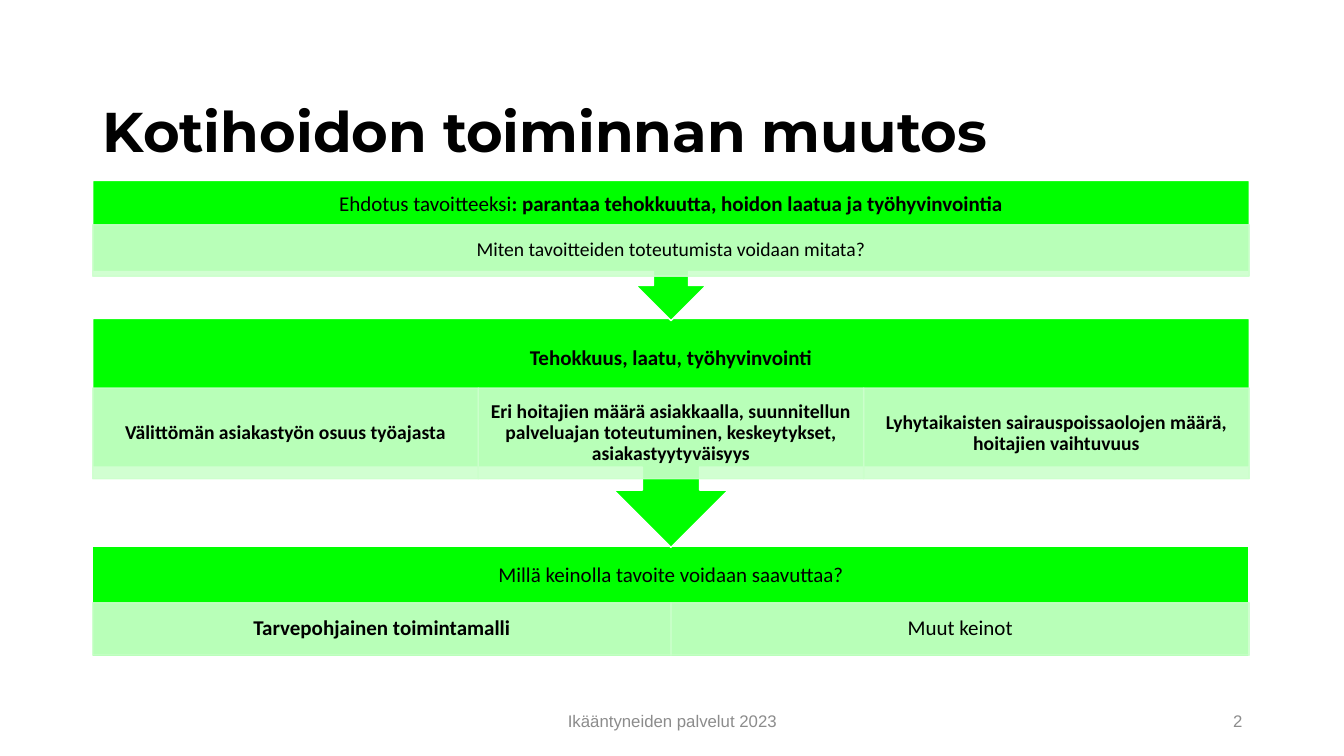
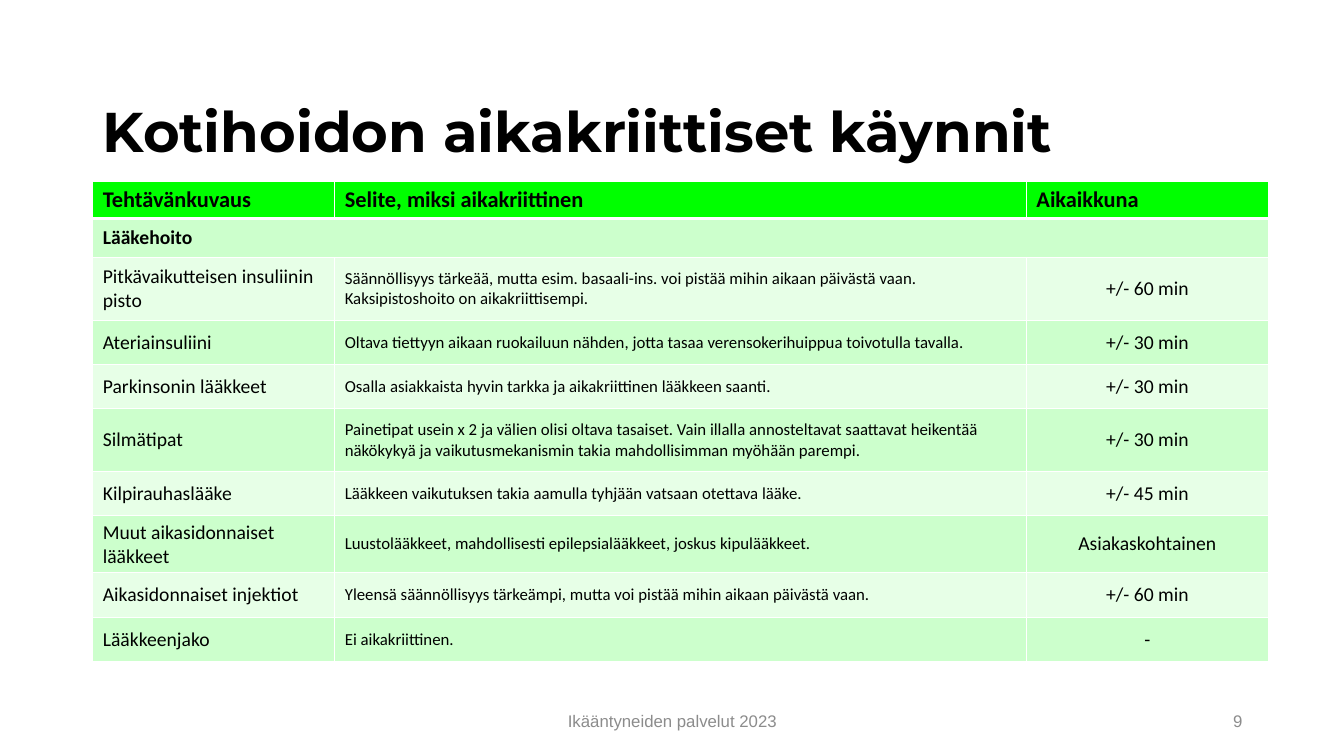
from pptx import Presentation
from pptx.util import Inches, Pt
from pptx.dml.color import RGBColor
from pptx.enum.shapes import MSO_SHAPE as Kind
from pptx.enum.text import PP_ALIGN as Align, MSO_ANCHOR as Anchor, MSO_AUTO_SIZE as Auto
from pptx.oxml import parse_xml
from pptx.oxml.ns import nsdecls, qn
from lxml.etree import SubElement

HUES = {"main": "00FF00", "tint": "CCFFCC", "pale": "E7FFE7",
        "ink": "000000", "edge": "FFFFFF", "grey": "8C8C8C"}
LEFT, WIDE = 0.92, 11.47
BODY = 0.65


def hue(name):
    return RGBColor.from_string(HUES[name])


class Deck:
    def __init__(self):
        self.file = Presentation()
        self.file.slide_width = Inches(13.33)
        self.file.slide_height = Inches(7.5)
        self.slide = None

    def page(self, title, number):
        self.slide = self.file.slides.add_slide(self.file.slide_layouts[5])
        head = self.slide.shapes.title
        head.left, head.top = Inches(LEFT), Inches(0.61)
        head.width, head.height = Inches(WIDE), Inches(1.45)
        frame = head.text_frame
        frame.text = title
        frame.auto_size = Auto.NONE
        frame.vertical_anchor = Anchor.MIDDLE
        self.style(frame, 40, True, Align.LEFT, "Montserrat", spacing=0.9)
        self.note("Ikääntyneiden palvelut 2023", 5.17, Align.CENTER)
        self.note(number, 9.42, Align.RIGHT)

    def style(self, frame, size, bold, align, face="Calibri", color="ink", spacing=1.0):
        for para in frame.paragraphs:
            para.alignment = align
            para.line_spacing = spacing
            font = para.font
            font.name, font.size, font.bold = face, Pt(size), bold
            font.color.rgb = hue(color)

    def note(self, text, left, align):
        box = self.slide.shapes.add_textbox(Inches(left), Inches(6.95), Inches(3), Inches(0.4))
        frame = box.text_frame
        frame.text = text
        frame.word_wrap = True
        frame.vertical_anchor = Anchor.MIDDLE
        self.style(frame, 12, False, align, "Arial", "grey")

    def block(self, kind, left, top, width, height, fill, line):
        shape = self.slide.shapes.add_shape(
            kind, Inches(left), Inches(top), Inches(width), Inches(height))
        shape.shadow.inherit = False
        shape.fill.solid()
        shape.fill.fore_color.rgb = hue(fill)
        shape.line.color.rgb = hue(line)
        shape.line.width = Pt(1)
        return shape

    def label(self, shape, runs, size, side, upper, lower):
        frame = shape.text_frame
        frame.word_wrap = True
        frame.vertical_anchor = Anchor.MIDDLE
        frame.margin_left = frame.margin_right = Inches(side)
        frame.margin_top, frame.margin_bottom = Inches(upper), Inches(lower)
        para = frame.paragraphs[0]
        for text, bold in runs:
            run = para.add_run()
            run.text = text
            if len(runs) > 1:
                run.font.bold = bold
        self.style(frame, size, runs[0][1], Align.CENTER, spacing=0.9)

    def band(self, top, height, head, runs, arrow=True):
        kind = Kind.DOWN_ARROW_CALLOUT if arrow else Kind.RECTANGLE
        shape = self.block(kind, LEFT, top, WIDE, height, "main", "edge")
        body = height * BODY if arrow else height
        self.label(shape, runs, 15, 0.12, 0.12, body - head + 0.12)

    def row(self, top, height, size, items):
        width = WIDE / len(items)
        for spot, item in enumerate(items):
            shape = self.block(Kind.RECTANGLE, LEFT + spot * width, top,
                               width, height, "tint", "tint")
            for tone in shape.element.spPr.iter(qn("a:srgbClr")):
                SubElement(tone, qn("a:alpha"), val="90000")
            self.label(shape, [item], size, 0.11, 0.02, 0.02)

    def edges(self, cell, base):
        props = cell._tc.get_or_add_tcPr()
        for spot, side in enumerate("LRTB"):
            width = Pt(base if side == "B" else 1)
            props.insert(spot, parse_xml(
                f'<a:ln{side} {nsdecls("a")} w="{width}"><a:solidFill>'
                f'<a:srgbClr val="{HUES["edge"]}"/></a:solidFill></a:ln{side}>'))

    def cell(self, cell, text, size, bold, align, fill, base):
        cell.text = text
        cell.vertical_anchor = Anchor.MIDDLE
        cell.fill.solid()
        cell.fill.fore_color.rgb = hue(fill)
        self.edges(cell, base)
        self.style(cell.text_frame, size, bold, align)

    def table(self, top, cols, highs, rows):
        grid = self.slide.shapes.add_table(
            len(rows), len(cols), Inches(LEFT), Inches(top),
            Inches(sum(cols)), Inches(sum(highs))).table
        for col, width in zip(grid.columns, cols):
            col.width = Inches(width)
        for y, (high, texts) in enumerate(zip(highs, rows)):
            grid.rows[y].height = Inches(high)
            fill = "main" if y == 0 else "tint" if y % 2 else "pale"
            for x, text in enumerate(texts):
                size = 16 if y == 0 else 12 if x == 1 else 14
                align = Align.CENTER if y and x == 2 else Align.LEFT
                self.cell(grid.cell(y, x), text, size, y < 2, align, fill, 1 if y else 3)
            if len(texts) == 1:
                grid.cell(y, 0).merge(grid.cell(y, len(cols) - 1))


def main():
    deck = Deck()
    deck.page("Kotihoidon toiminnan muutos", "2")
    deck.band(5.42, 1.1, 0.59, [("Millä keinolla tavoite voidaan saavuttaa?", False)], arrow=False)
    deck.row(5.98, 0.52, 15, [("Tarvepohjainen toimintamalli", True), ("Muut keinot", False)])
    deck.band(3.16, 2.27, 0.8, [("Tehokkuus, laatu, työhyvinvointi", True)])
    deck.row(3.85, 0.9, 14, [
        ("Välittömän asiakastyön osuus työajasta", True),
        ("Eri hoitajien määrä asiakkaalla, suunnitellun palveluajan toteutuminen, "
         "keskeytykset, asiakastyytyväisyys", True),
        ("Lyhytaikaisten sairauspoissaolojen määrä, hoitajien vaihtuvuus", True)])
    deck.band(1.79, 1.39, 0.49, [
        ("Ehdotus tavoitteeksi", False),
        (": parantaa tehokkuutta, hoidon laatua ja työhyvinvointia", True)])
    deck.row(2.23, 0.51, 14, [("Miten tavoitteiden toteutumista voidaan mitata?", False)])

    deck.page("Kotihoidon aikakriittiset käynnit", "9")
    deck.table(1.8, [2.4, 6.86, 2.4],
               [0.31, 0.39, 0.62, 0.44, 0.44, 0.62, 0.44, 0.44, 0.44, 0.44], [
        ["Tehtävänkuvaus", "Selite, miksi aikakriittinen", "Aikaikkuna"],
        ["Lääkehoito"],
        ["Pitkävaikutteisen insuliinin pisto",
         "Säännöllisyys tärkeää, mutta esim. basaali-ins. voi pistää mihin aikaan päivästä vaan.\n"
         "Kaksipistoshoito on aikakriittisempi.", "+/- 60 min"],
        ["Ateriainsuliini",
         "Oltava tiettyyn aikaan ruokailuun nähden, jotta tasaa verensokerihuippua "
         "toivotulla tavalla.", "+/- 30 min"],
        ["Parkinsonin lääkkeet",
         "Osalla asiakkaista hyvin tarkka ja aikakriittinen lääkkeen saanti.", "+/- 30 min"],
        ["Silmätipat",
         "Painetipat usein x 2 ja välien olisi oltava tasaiset. Vain illalla annosteltavat "
         "saattavat heikentää näkökykyä ja vaikutusmekanismin takia mahdollisimman myöhään "
         "parempi.", "+/- 30 min"],
        ["Kilpirauhaslääke",
         "Lääkkeen vaikutuksen takia aamulla tyhjään vatsaan otettava lääke.", "+/- 45 min"],
        ["Muut aikasidonnaiset lääkkeet",
         "Luustolääkkeet, mahdollisesti epilepsialääkkeet, joskus kipulääkkeet.",
         "Asiakaskohtainen"],
        ["Aikasidonnaiset injektiot",
         "Yleensä säännöllisyys tärkeämpi, mutta voi pistää mihin aikaan päivästä vaan.",
         "+/- 60 min"],
        ["Lääkkeenjako", "Ei aikakriittinen.", "-"]])
    deck.file.save("out.pptx")


if __name__ == "__main__":
    main()
